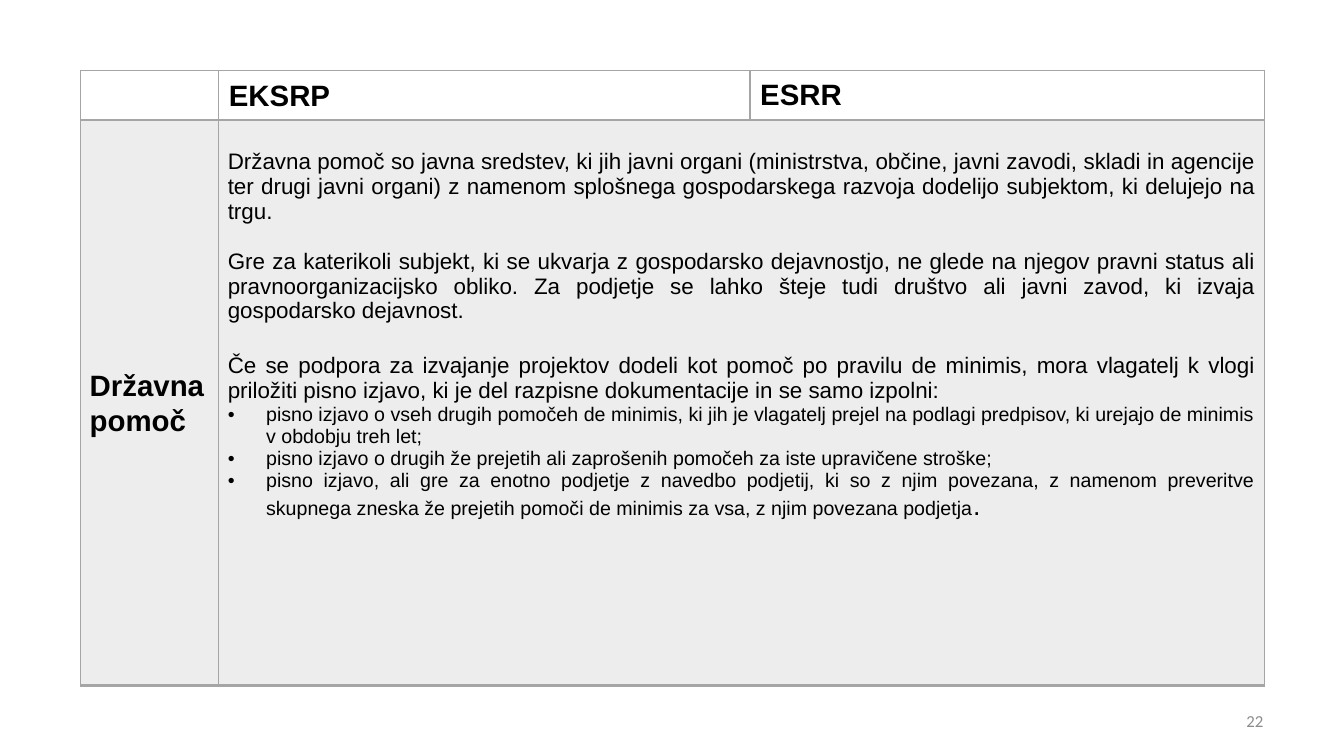
import dataclasses

import pptx
import pptx.dml.color
import pptx.enum.text
import pptx.oxml
import pptx.oxml.ns
import pptx.util

Inches = pptx.util.Inches
Pt = pptx.util.Pt
Align = pptx.enum.text.PP_ALIGN
Anchor = pptx.enum.text.MSO_ANCHOR


@dataclasses.dataclass(frozen=True)
class Theme:
    """Fonts, colours and type sizes of the slide."""
    font: str = "Arial"
    number_font: str = "Calibri"
    ink: str = "000000"
    number_ink: str = "8C8C8C"
    rule: str = "A5A5A5"
    header_fill: str = "FFFFFF"
    body_fill: str = "EDEDED"
    heading: int = 21
    full_stop: int = 19
    body: int = 16
    bullet: int = 14
    number: int = 12


THEME = Theme()
COLUMN_WIDTHS = (1.37, 5.27, 5.1)
ROW_HEIGHTS = (0.49, 5.61)
STATE_AID = (
    ("Državna pomoč so javna sredstev, ki jih javni organi (ministrstva, občine, javni zavodi, "
     "skladi in agencije ter drugi javni organi) z namenom splošnega gospodarskega razvoja "
     "dodelijo subjektom, ki delujejo na trgu.", 0),
    ("Gre za katerikoli subjekt, ki se ukvarja z gospodarsko dejavnostjo, ne glede na njegov "
     "pravni status ali pravnoorganizacijsko obliko. Za podjetje se lahko šteje tudi društvo "
     "ali javni zavod, ki izvaja gospodarsko dejavnost.", 18),
    ("Če se podpora za izvajanje projektov dodeli kot pomoč po pravilu de minimis, mora "
     "vlagatelj k vlogi priložiti pisno izjavo, ki je del razpisne dokumentacije in se samo "
     "izpolni:", 21.5),
)
STATEMENTS = (
    "pisno izjavo o vseh drugih pomočeh de minimis, ki jih je vlagatelj prejel na podlagi "
    "predpisov, ki urejajo de minimis v obdobju treh let;",
    "pisno izjavo o drugih že prejetih ali zaprošenih pomočeh za iste upravičene stroške;",
    "pisno izjavo, ali gre za enotno podjetje z navedbo podjetij, ki so z njim povezana, z "
    "namenom preveritve skupnega zneska že prejetih pomoči de minimis za vsa, z njim povezana "
    "podjetja",
)


def add_run(paragraph, text, size, bold=False, font=THEME.font, color=THEME.ink):
    """Add one formatted run to a paragraph."""
    run = paragraph.add_run()
    run.text = text
    run.font.size = Pt(size)
    run.font.bold = bold
    run.font.name = font
    run.font.color.rgb = pptx.dml.color.RGBColor.from_string(color)


def add_bullet(paragraph):
    """Give a paragraph a round bullet with a hanging indent."""
    properties = paragraph._p.get_or_add_pPr()
    properties.set("marL", str(Inches(0.38)))
    properties.set("indent", str(-Inches(0.38)))
    namespace = pptx.oxml.ns.nsdecls("a")
    properties.append(pptx.oxml.parse_xml(f'<a:buFont {namespace} typeface="Arial"/>'))
    properties.append(pptx.oxml.parse_xml(f'<a:buChar {namespace} char="•"/>'))


def write(frame, text, size, align=Align.LEFT, before=0, after=0, spacing=None,
          bulleted=False, **run_format):
    """Write a paragraph into a text frame, using its empty first one if there is one."""
    paragraph = frame.paragraphs[0] if not frame.text else frame.add_paragraph()
    if bulleted:
        add_bullet(paragraph)
    paragraph.alignment = align
    paragraph.space_before = Pt(before)
    paragraph.space_after = Pt(after)
    if spacing:
        paragraph.line_spacing = spacing
    add_run(paragraph, text, size, **run_format)
    return paragraph


def style_cell(cell, fill, side_inset, bottom_rule=1):
    """Set the borders, fill and insets of a table cell."""
    properties = cell._tc.get_or_add_tcPr()
    for side, width in (("L", 1), ("R", 1), ("T", 1), ("B", bottom_rule)):
        properties.append(pptx.oxml.parse_xml(
            f'<a:ln{side} {pptx.oxml.ns.nsdecls("a")} w="{Pt(width)}"><a:solidFill>'
            f'<a:srgbClr val="{THEME.rule}"/></a:solidFill></a:ln{side}>'))
    cell.fill.solid()
    cell.fill.fore_color.rgb = pptx.dml.color.RGBColor.from_string(fill)
    cell.margin_left = cell.margin_right = Inches(side_inset)
    cell.margin_top = cell.margin_bottom = 0
    cell.vertical_anchor = Anchor.MIDDLE


def add_comparison_table(slide):
    """Add the ruled table with its column and row sizes."""
    table = slide.shapes.add_table(
        len(ROW_HEIGHTS), len(COLUMN_WIDTHS), Inches(0.8), Inches(0.7),
        Inches(sum(COLUMN_WIDTHS)), Inches(sum(ROW_HEIGHTS))).table
    table.first_row = table.horz_banding = False
    for column, width in zip(table.columns, COLUMN_WIDTHS):
        column.width = Inches(width)
    for row, height in zip(table.rows, ROW_HEIGHTS):
        row.height = Inches(height)
    for header, body in zip(table.rows[0].cells, table.rows[1].cells):
        style_cell(header, THEME.header_fill, 0.1, bottom_rule=2)
        style_cell(body, THEME.body_fill, 0.09, bottom_rule=2)
    table.cell(1, 1).merge(table.cell(1, 2))
    return table


def fill_headings(table):
    """Write the column headings and the row heading."""
    write(table.cell(0, 1).text_frame, "EKSRP", THEME.heading, align=Align.JUSTIFY,
          spacing=1.07, after=8, bold=True)
    write(table.cell(0, 2).text_frame, "ESRR", THEME.heading, bold=True)
    write(table.cell(1, 0).text_frame, "Državna pomoč", THEME.heading,
          spacing=1.07, after=8, bold=True)


def fill_state_aid(cell):
    """Write the explanation of state aid and the list of statements."""
    cell.vertical_anchor = Anchor.TOP
    cell.margin_top = Inches(0.29)
    for text, before in STATE_AID:
        write(cell.text_frame, text, THEME.body, align=Align.JUSTIFY, before=before)
    for text in STATEMENTS:
        paragraph = write(cell.text_frame, text, THEME.bullet, align=Align.JUSTIFY,
                          bulleted=True)
    add_run(paragraph, ".", THEME.full_stop)


def add_slide_number(slide, number):
    """Add the slide number at the lower right."""
    box = slide.shapes.add_textbox(Inches(9.63), Inches(6.95), Inches(3), Inches(0.4))
    box.text_frame.word_wrap = True
    box.text_frame.vertical_anchor = Anchor.MIDDLE
    write(box.text_frame, number, THEME.number, align=Align.RIGHT, after=6,
          font=THEME.number_font, color=THEME.number_ink)


def main():
    """Build the slide and save it."""
    presentation = pptx.Presentation()
    presentation.slide_width = Inches(13.33)
    presentation.slide_height = Inches(7.5)
    slide = presentation.slides.add_slide(presentation.slide_layouts[6])
    table = add_comparison_table(slide)
    fill_headings(table)
    fill_state_aid(table.cell(1, 1))
    add_slide_number(slide, "22")
    presentation.save("out.pptx")


if __name__ == "__main__":
    main()
